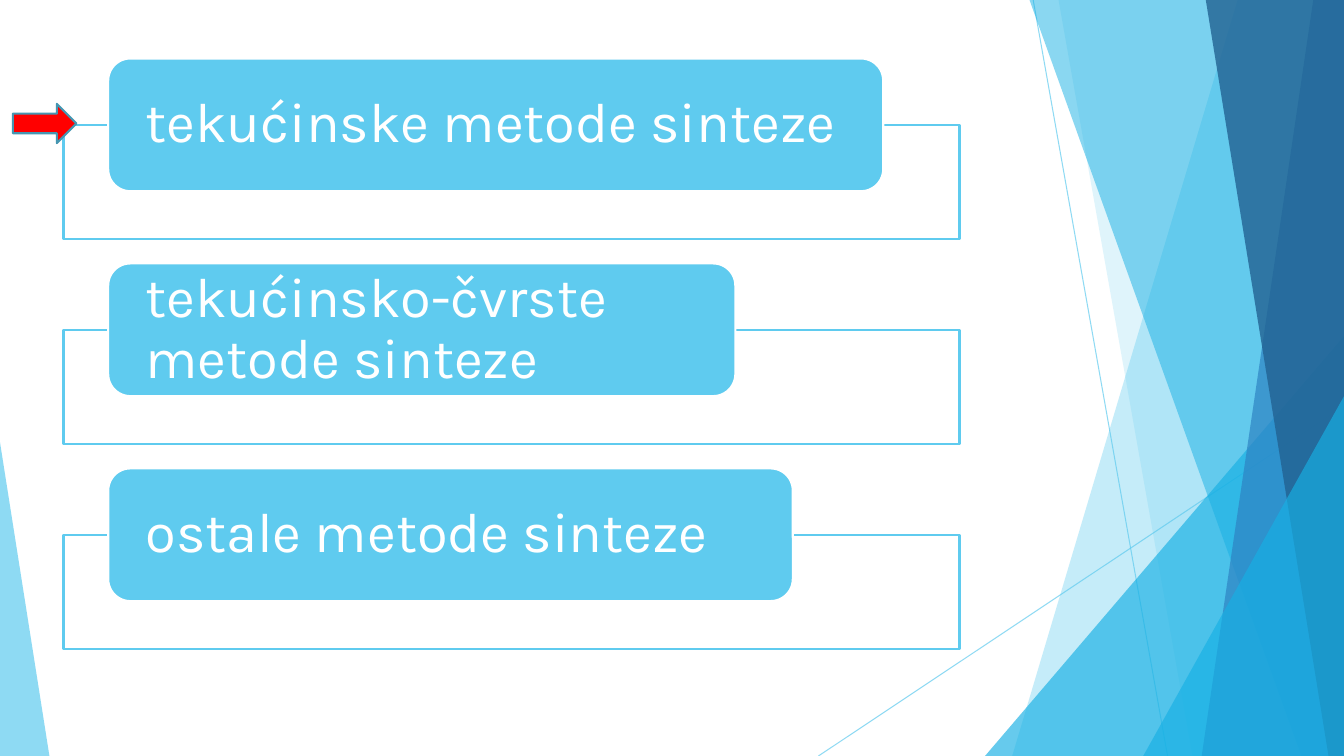
from dataclasses import dataclass

from lxml.etree import SubElement
from pptx import Presentation
from pptx.dml.color import RGBColor
from pptx.enum.shapes import MSO_CONNECTOR as Connector, MSO_SHAPE as Preset
from pptx.enum.text import MSO_ANCHOR as Anchor, PP_ALIGN as Align
from pptx.oxml.ns import qn
from pptx.util import Pt

WIDTH, HEIGHT = 960, 540
TOP = -0.6
COLORS = {
    "sky": "5FCBEF",
    "cyan": "17B0E4",
    "blue": "2E83C3",
    "navy": "226292",
    "white": "FFFFFF",
    "red": "FF0000",
    "teal": "4696B1",
}


@dataclass
class Ray:
    start: tuple[float, float]
    end: tuple[float, float]


@dataclass
class Facet:
    """Band from two slanted-edge ends to the right side of the page."""
    top_x: float
    bottom_x: float
    color: str
    opacity: int


@dataclass
class Corner:
    """Right triangle standing on the bottom of the page."""
    left: float
    top: float
    width: float
    apex: float
    color: str
    opacity: int


@dataclass
class Method:
    text: str
    width: float


RAYS = [
    Ray((738, 0), (834, HEIGHT)),
    Ray((WIDTH, 290), (584.6, HEIGHT)),
]
DECOR = [
    Facet(884.2, 723, "sky", 36),
    Facet(756, 851.8, "sky", 20),
    Corner(703.6, 240, 256.4, 1, "cyan", 66),
    Facet(735.2, 929.5, "cyan", 50),
    Facet(938.2, 858.4, "blue", 70),
    Facet(861.2, 949, "navy", 80),
    Corner(816.6, 283, 143.4, 1, "cyan", 66),
    Corner(0, 316, 35.3, 0, "sky", 70),
]
METHODS = [
    Method("tekućinske metode sinteze", 553.6),
    Method("tekućinsko-čvrste metode sinteze", 448),
    Method("ostale metode sinteze", 489),
]
ROW_STEP = 146.4


def rgb(name: str) -> RGBColor:
    return RGBColor.from_string(COLORS[name])


def set_opacity(shape, color_at: str, percent: int) -> None:
    for color in shape._element.spPr.xpath(color_at):
        SubElement(color, qn("a:alpha")).set("val", str(percent * 1000))


def style(shape, fill: str, opacity: int = 100, line: str | None = None) -> None:
    shape.shadow.inherit = False
    shape.fill.solid()
    shape.fill.fore_color.rgb = rgb(fill)
    if opacity < 100:
        set_opacity(shape, "./a:solidFill/a:srgbClr", opacity)
    if line:
        shape.line.color.rgb = rgb(line)
        shape.line.width = Pt(1.5)
    else:
        shape.line.fill.background()


def add_preset(page, preset, left: float, top: float, width: float, height: float, **look):
    box = page.shapes.add_shape(preset, Pt(left), Pt(top), Pt(width), Pt(height))
    style(box, **look)
    return box


def add_ray(page, ray: Ray) -> None:
    line = page.shapes.add_connector(
        Connector.STRAIGHT, *(Pt(value) for value in ray.start + ray.end))
    line.line.color.rgb = rgb("sky")
    line.line.width = Pt(0.75)
    set_opacity(line, "./a:ln/a:solidFill/a:srgbClr", 70)
    SubElement(line._element.spPr, qn("a:effectLst"))


def add_facet(page, facet: Facet) -> None:
    outline = page.shapes.build_freeform(Pt(facet.top_x), Pt(TOP))
    corners = [(WIDTH, TOP), (WIDTH, HEIGHT), (facet.bottom_x, HEIGHT)]
    outline.add_line_segments([(Pt(x), Pt(y)) for x, y in corners], close=True)
    style(outline.convert_to_shape(), facet.color, facet.opacity)


def add_corner(page, corner: Corner) -> None:
    triangle = add_preset(
        page, Preset.ISOSCELES_TRIANGLE, corner.left, corner.top, corner.width,
        HEIGHT - corner.top, fill=corner.color, opacity=corner.opacity)
    triangle.adjustments[0] = corner.apex


def write(box, text: str, *, size: float, font: str, color: str, inset: float,
          spacing: float) -> None:
    frame = box.text_frame
    frame.word_wrap = True
    frame.vertical_anchor = Anchor.MIDDLE
    frame.margin_left = frame.margin_right = Pt(inset)
    frame.margin_top = frame.margin_bottom = 0
    para = frame.paragraphs[0]
    para.alignment = Align.LEFT
    para.line_spacing = spacing
    span = para.add_run()
    span.text = text
    span.font.size = Pt(size)
    span.font.name = font
    span.font.color.rgb = rgb(color)


def add_method(page, method: Method, row: int) -> None:
    offset = row * ROW_STEP
    add_preset(page, Preset.RECTANGLE, 45.4, 89.3 + offset, 640, 81.4,
               fill="white", opacity=90, line="sky")
    card = add_preset(page, Preset.ROUNDED_RECTANGLE, 77.3, 41.8 + offset, method.width, 94.8,
                      fill="sky", line="white")
    write(card, method.text, size=40, font="Karla", color="white", inset=22, spacing=0.9)


def main() -> None:
    deck = Presentation()
    deck.slide_width, deck.slide_height = Pt(WIDTH), Pt(HEIGHT)
    page = deck.slides.add_slide(deck.slide_layouts[6])

    # Faceted backdrop
    for ray in RAYS:
        add_ray(page, ray)
    for part in DECOR:
        if isinstance(part, Facet):
            add_facet(page, part)
        else:
            add_corner(page, part)

    # List of methods
    for row, method in enumerate(METHODS):
        add_method(page, method, row)

    # Arrow at the current method
    add_preset(page, Preset.RIGHT_ARROW, 9.2, 74.2, 45.4, 28, fill="red", line="teal")

    deck.save("out.pptx")


if __name__ == "__main__":
    main()
